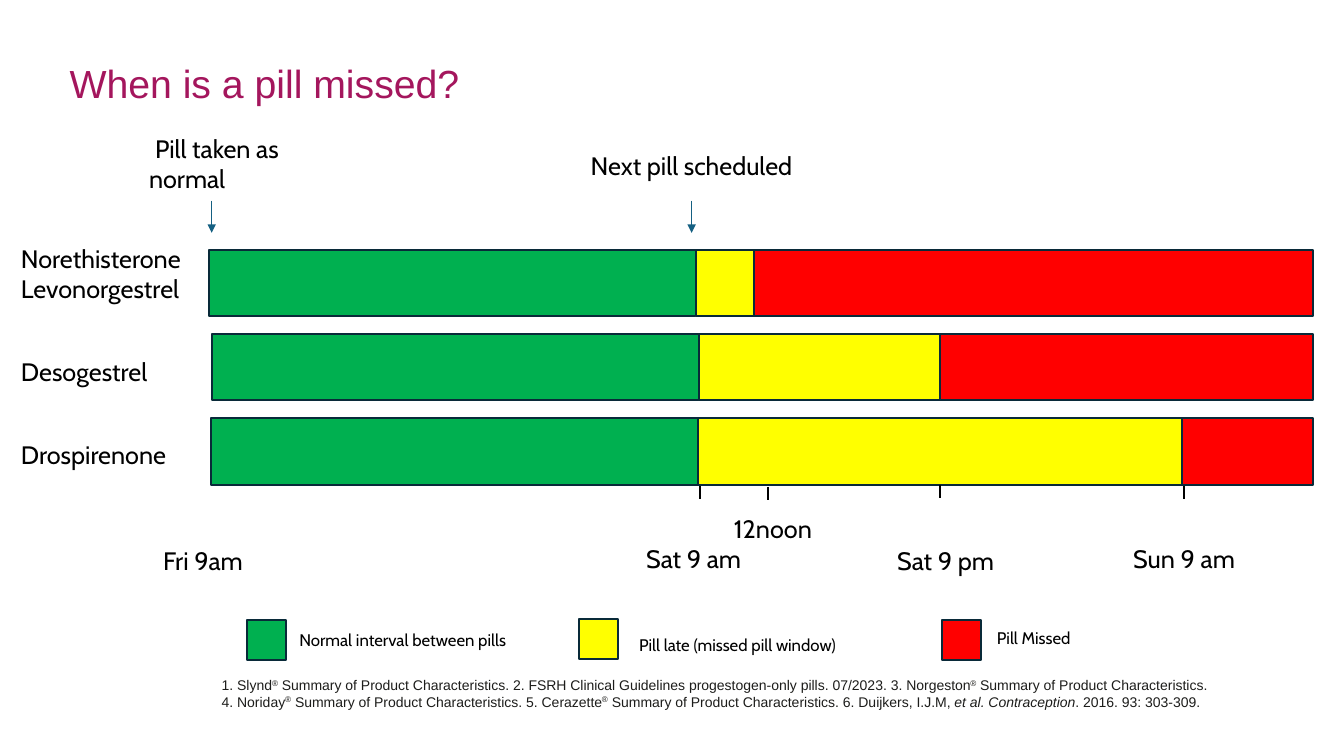
from itertools import pairwise
from lxml import etree
from pptx import Presentation
from pptx.dml.color import RGBColor as RGB
from pptx.enum.shapes import MSO_CONNECTOR as Line, MSO_SHAPE as Shape
from pptx.enum.text import MSO_ANCHOR as Anchor, PP_ALIGN as Align
from pptx.oxml.ns import qn
from pptx.util import Inches, Pt

HUES = {"green": "00B050", "yellow": "FFFF00", "red": "FF0000", "edge": "092A39",
        "arrow": "156082", "black": "000000", "title": "A4165D", "note": "1D1D1B"}
BANDS = ("green", "yellow", "red")


def hue(name):
    """Look up a colour by name."""
    return RGB.from_string(HUES[name])


def style(font, size, color, face):
    """Set the size, colour and typeface of a font."""
    font.size, font.name = Pt(size), face
    font.color.rgb = hue(color)


def write(slide, text, x, y, w, h=0.4, size=18, color="black", face="Cabin", wrap=True, indent=0):
    """Add a text box; ^ toggles superscript and _ toggles italics."""
    frame = slide.shapes.add_textbox(Inches(x), Inches(y), Inches(w), Inches(h)).text_frame
    frame.word_wrap = wrap
    for i, line in enumerate(text.split("\n")):
        para = frame.paragraphs[0] if i == 0 else frame.add_paragraph()
        if indent:
            para._p.get_or_add_pPr().set("indent", str(Inches(indent)))
        for j, part in enumerate(line.split("_")):
            for k, bit in enumerate(part.split("^")):
                if not bit:
                    continue
                run = para.add_run()
                run.text = bit
                style(run.font, size, color, face)
                if j % 2:
                    run.font.italic = True
                if k % 2:
                    run._r.get_or_add_rPr().set("baseline", "30000")


def block(slide, color, x, y, w, h):
    """Draw a filled rectangle with a dark edge."""
    rect = slide.shapes.add_shape(Shape.RECTANGLE, Inches(x), Inches(y), Inches(w), Inches(h))
    rect.shadow.inherit = False
    rect.fill.solid()
    rect.fill.fore_color.rgb = hue(color)
    rect.line.color.rgb = hue("edge")
    rect.line.width = Pt(1.5)


def stroke(slide, x, y, h, color="black", width=1.5, head=False):
    """Draw a vertical line downwards, with an optional arrowhead."""
    line = slide.shapes.add_connector(Line.STRAIGHT, Inches(x), Inches(y), Inches(x), Inches(y + h))
    line.line.color.rgb = hue(color)
    line.line.width = Pt(width)
    if head:
        etree.SubElement(line.line._get_or_add_ln(), qn("a:tailEnd"), type="triangle")
    etree.SubElement(line._element.spPr, qn("a:effectLst"))


def title(slide, x, y, w, h):
    """Place and format the title."""
    box = slide.shapes.title
    box.left, box.top, box.width, box.height = map(Inches, (x, y, w, h))
    frame = box.text_frame
    frame.text = "When is a pill missed?"
    frame.vertical_anchor = Anchor.TOP
    para = frame.paragraphs[0]
    para.alignment, para.line_spacing = Align.LEFT, 0.9
    style(para.font, 28, "title", "Arial")


def events(slide, x, y):
    """Mark the two pill times above the bars."""
    write(slide, "Pill taken as normal", x, y, 1.81, 0.71, indent=0.06)
    write(slide, "Next pill scheduled", x + 4.38, y + 0.17, 2.32, wrap=False)
    for dx in (0.72, 5.48):
        stroke(slide, x + dx, y + 0.72, 0.32, "arrow", 1, True)


def chart(slide, x, y, w):
    """Draw a labelled bar of three bands for each pill."""
    rows = [("Norethisterone\nLevonorgestrel", 0, -0.12, 1.01, (1.96, 6.79, 7.37)),
            ("Desogestrel", 0.83, 0.18, 0.4, (1.99, 6.82, 9.21)),
            ("Drospirenone", 1.67, 0.16, 0.4, (1.98, 6.81, 11.61))]
    for name, dy, drop, h, starts in rows:
        write(slide, name, x, y + dy + drop, 2.07, h)
        for color, (a, b) in zip(BANDS, pairwise(starts + (w,))):
            block(slide, color, x + a, y + dy, b - a, 0.66)


def times(slide, x, y):
    """Add the ticks and clock labels under the bars."""
    for dx, dy in ((4.84, 0.01), (5.52, 0.02), (7.22, 0), (9.64, 0.01)):
        stroke(slide, x + dx, y + dy, 0.13)
    labels = [("Fri 9am", -0.58, 0.55), ("Sat 9 am", 4.21, 0.53), ("12noon", 5.08, 0.23),
              ("Sat 9 pm", 6.7, 0.55), ("Sun 9 am", 9.04, 0.53)]
    for text, dx, dy in labels:
        write(slide, text, x + dx, y + dy, 1.86)


def legend(slide, x, y):
    """Explain the three colours."""
    items = [("Normal interval between pills", 0, 0.01, 0.42, 0.06),
             ("Pill late (missed pill window)", 3.29, 0, 0.5, 0.11),
             ("Pill Missed", 6.89, 0.01, 0.45, 0.04)]
    for color, (text, dx, dy, gap, drop) in zip(BANDS, items):
        block(slide, color, x + dx, y + dy, 0.39, 0.4)
        write(slide, text, x + dx + gap, y + drop, 2.76, 0.3, size=12)


def sources(slide, x, y, w, h):
    """List the references."""
    text = ("1. Slynd^®^ Summary of Product Characteristics. 2. FSRH Clinical Guidelines "
            "progestogen-only pills. 07/2023. 3. Norgeston^®^ Summary of Product Characteristics.\n"
            "4. Noriday^®^ Summary of Product Characteristics. 5. Cerazette^®^ Summary of Product "
            "Characteristics. 6. Duijkers, I.J.M, _et al. Contraception_. 2016. 93: 303-309.")
    write(slide, text, x, y, w, h, size=10, color="note", face="Arial")


def main():
    """Build and save the slide."""
    deck = Presentation()
    deck.slide_width, deck.slide_height = Inches(13.33), Inches(7.5)
    slide = deck.slides.add_slide(deck.slide_layouts[5])
    title(slide, 0.59, 0.59, 12.06, 0.4)
    chart(slide, 0.11, 2.48, 12.91)
    events(slide, 1.38, 1.27)
    times(slide, 2.1, 4.81)
    legend(slide, 2.45, 6.14)
    sources(slide, 2.1, 6.66, 10.51, 0.44)
    deck.save("out.pptx")


if __name__ == "__main__":
    main()
